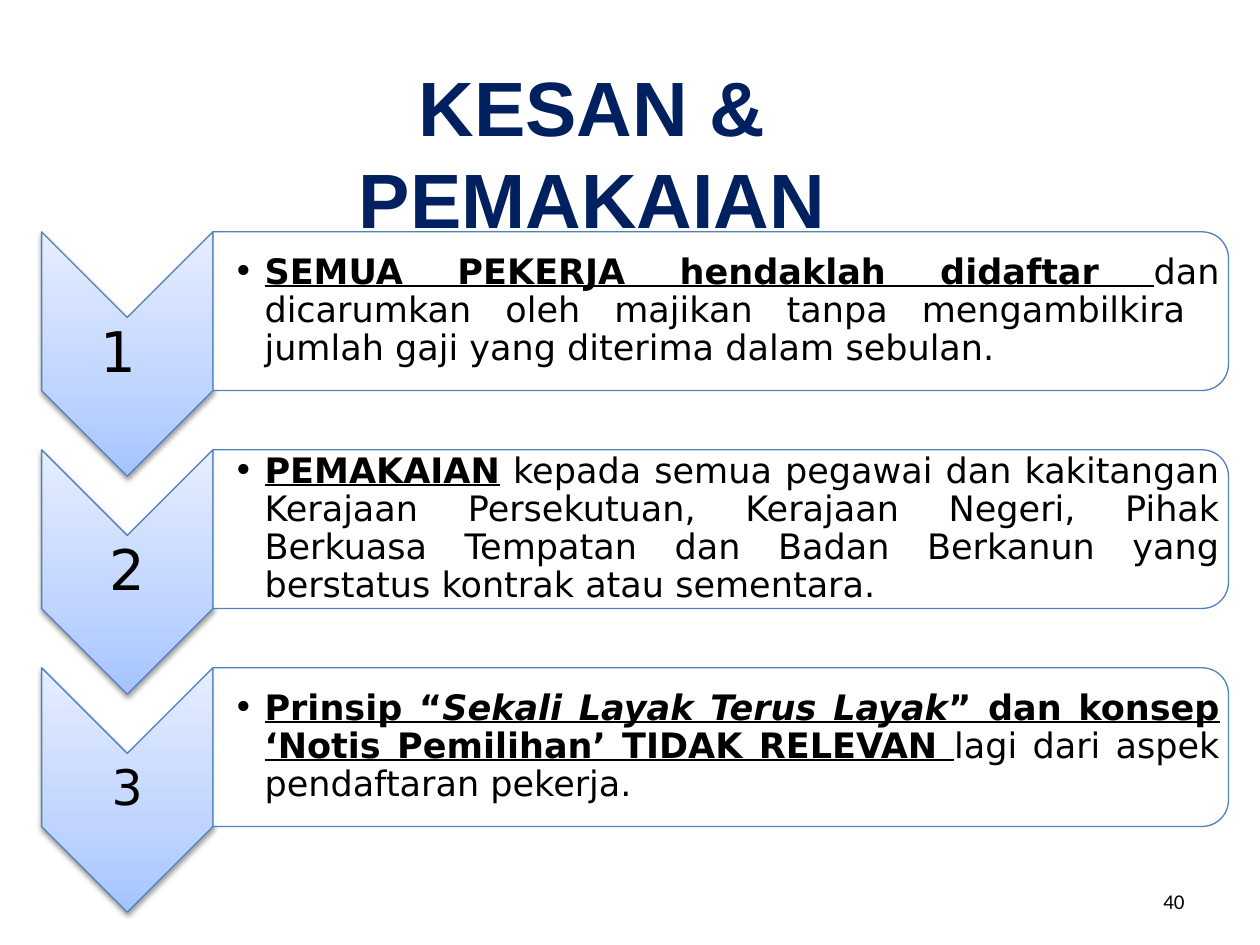
from dataclasses import dataclass

from lxml.etree import SubElement
from pptx import Presentation
from pptx.dml.color import RGBColor
from pptx.enum.shapes import MSO_SHAPE as Shape
from pptx.enum.text import MSO_ANCHOR as Anchor, PP_ALIGN as Align
from pptx.oxml import parse_xml
from pptx.oxml.ns import nsdecls, qn
from pptx.util import Inches, Pt

COLORS = {
    "text": "000000",
    "title": "002060",
    "line": "4F81BD",
    "panel": "FFFFFF",
    "deep": "A4C4FF",
    "mid": "BFD4FF",
    "pale": "E6EEFF",
}
BODY_FONT = "DejaVu Sans"
TOP, PITCH = 1.84, 1.73


@dataclass
class Run:
    text: str
    strong: bool = False
    italic: bool = False


@dataclass
class Step:
    label: str
    size: int
    runs: list[Run]


STEPS = [
    Step("1 ", 32, [
        Run("SEMUA PEKERJA hendaklah didaftar ", True),
        Run("dan dicarumkan oleh majikan tanpa mengambilkira  jumlah gaji "
            "yang diterima dalam sebulan."),
    ]),
    Step("2", 32, [
        Run("PEMAKAIAN", True),
        Run(" kepada semua pegawai dan kakitangan Kerajaan Persekutuan, "
            "Kerajaan Negeri, Pihak Berkuasa Tempatan dan Badan Berkanun "
            "yang berstatus kontrak atau sementara."),
    ]),
    Step("3", 28, [
        Run("Prinsip “", True),
        Run("Sekali Layak Terus Layak", True, True),
        Run("” dan konsep ‘Notis Pemilihan’ TIDAK RELEVAN ", True),
        Run("lagi dari aspek pendaftaran pekerja. "),
    ]),
]


def rgb(name: str) -> RGBColor:
    return RGBColor.from_string(COLORS[name])


def add_turned(s, kind: Shape, x: float, y: float, w: float, h: float):
    left, top = x + (w - h) / 2, y + (h - w) / 2
    sp = s.shapes.add_shape(kind, Inches(left), Inches(top), Inches(h), Inches(w))
    sp.rotation = 90
    sp.shadow.inherit = False
    sp.fill.solid()
    sp.fill.fore_color.rgb = rgb("panel")
    sp.line.color.rgb = rgb("line")
    sp.line.width = Pt(0.75)
    return sp


def add_text(s, x: float, y: float, w: float, h: float, runs: list[Run], font: str,
             size: int, align: Align, anchor: Anchor = Anchor.MIDDLE,
             color: str = "text", insets=(0.1, 0.05, 0.1, 0.05)):
    tf = s.shapes.add_textbox(Inches(x), Inches(y), Inches(w), Inches(h)).text_frame
    tf.word_wrap = True
    tf.vertical_anchor = anchor
    tf.margin_left, tf.margin_top, tf.margin_right, tf.margin_bottom = map(Inches, insets)
    p = tf.paragraphs[0]
    p.alignment = align
    p.font.name, p.font.size = font, Pt(size)
    p.font.color.rgb = rgb(color)
    for run in runs:
        r = p.add_run()
        r.text = run.text
        if run.strong:
            r.font.bold = r.font.underline = True
        if run.italic:
            r.font.italic = True
    return p


def style_chevron(sp) -> None:
    stops = "".join(
        f'<a:gs pos="{pos}"><a:srgbClr val="{COLORS[name]}"/></a:gs>'
        for pos, name in ((0, "deep"), (35000, "mid"), (100000, "pale")))
    pr = sp.fill._xPr
    pr.replace(pr.find(qn("a:solidFill")), parse_xml(
        f'<a:gradFill {nsdecls("a")} rotWithShape="0"><a:gsLst>{stops}</a:gsLst>'
        '<a:lin ang="16200000" scaled="1"/></a:gradFill>'))
    pr.replace(pr.find(qn("a:effectLst")), parse_xml(
        f'<a:effectLst {nsdecls("a")}><a:outerShdw blurRad="40000" dist="20000" '
        'dir="5400000" rotWithShape="0"><a:srgbClr val="000000">'
        '<a:alpha val="38000"/></a:srgbClr></a:outerShdw></a:effectLst>'))


def add_bullet(p) -> None:
    pr = p._p.get_or_add_pPr()
    pr.set("marL", str(Inches(0.25)))
    pr.set("indent", str(Inches(-0.25)))
    end = pr.find(qn("a:defRPr"))
    for tag in (f'buFont {nsdecls("a")} typeface="{BODY_FONT}"',
                f'buChar {nsdecls("a")} char="•"'):
        end.addprevious(parse_xml(f"<a:{tag}/>"))


def add_step(s, step: Step, y: float) -> None:
    style_chevron(add_turned(s, Shape.CHEVRON, 0.33, y, 1.36, 1.94))
    p = add_text(s, 0.33, y + 0.68, 1.36, 0.58, [Run(step.label)], BODY_FONT,
                 step.size, Align.CENTER, insets=(0.02,) * 4)
    p.line_spacing = 0.9

    panel = add_turned(s, Shape.ROUND_2_SAME_RECTANGLE, 1.69, y, 8.06, 1.26)
    fill = panel.fill._xPr.find(qn("a:solidFill"))
    SubElement(fill[0], qn("a:alpha"), val="90000")
    p = add_text(s, 1.69, y + 0.06, 8, 1.14, step.runs, BODY_FONT, 20,
                 Align.JUSTIFY, insets=(0.16, 0.01, 0.01, 0.01))
    p.line_spacing = 0.9
    p.level = 1
    add_bullet(p)


def main() -> None:
    prs = Presentation()
    prs.slide_width, prs.slide_height = Inches(10), Inches(7.5)
    s = prs.slides.add_slide(prs.slide_layouts[6])
    for i, step in enumerate(STEPS):
        add_step(s, step, TOP + i * PITCH)
    add_text(s, 7.17, 6.95, 2.33, 0.4, [Run("40")], "Calibri", 12, Align.RIGHT)
    p = add_text(s, 1.45, 0.42, 6.5, 0.84, [Run("KESAN & PEMAKAIAN")], "Arial", 44,
                 Align.CENTER, Anchor.TOP, "title")
    p.font.bold = True
    prs.save("out.pptx")


if __name__ == "__main__":
    main()
